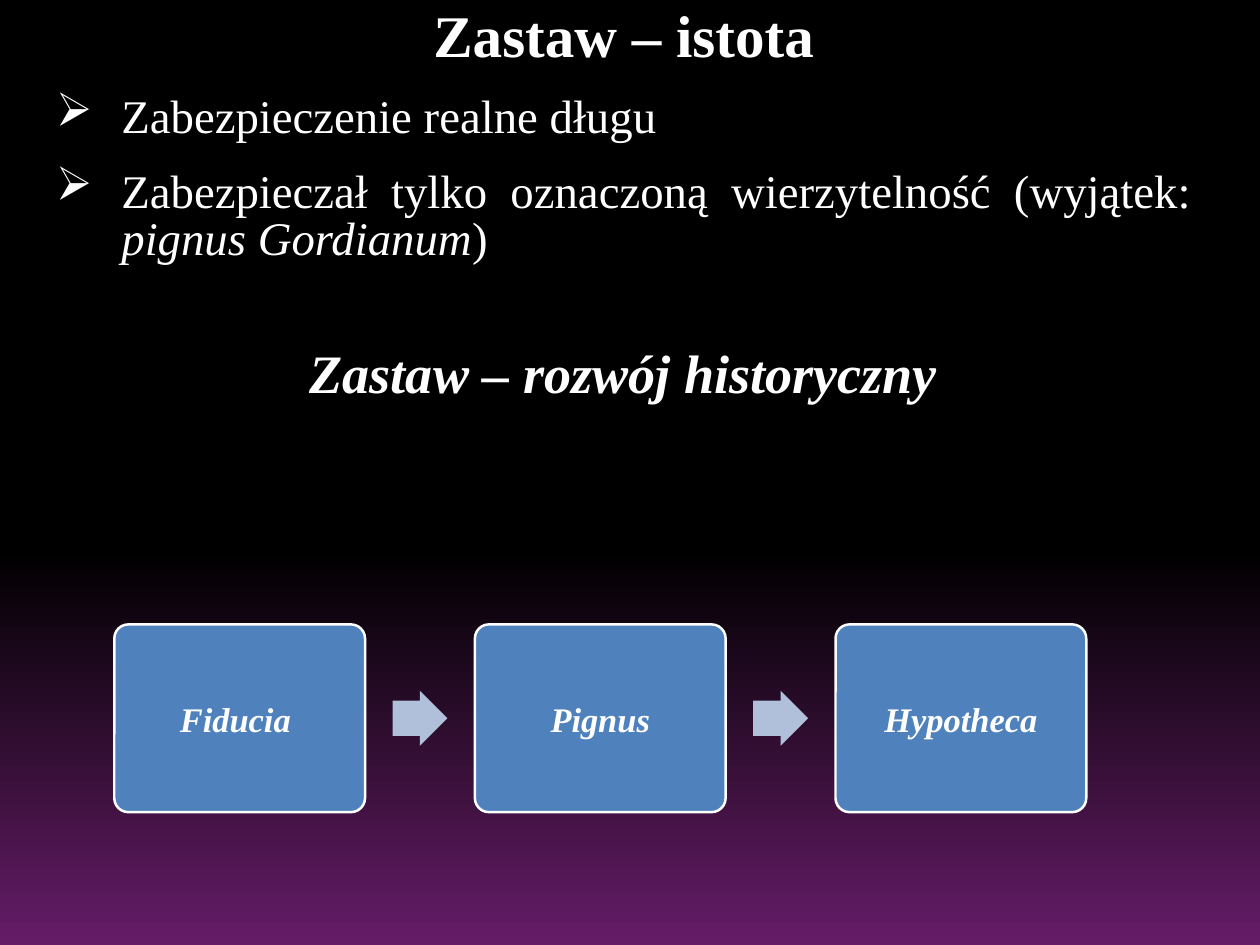
from dataclasses import dataclass

from lxml import etree
from pptx import Presentation
from pptx.dml.color import RGBColor
from pptx.enum.shapes import MSO_SHAPE
from pptx.enum.text import MSO_ANCHOR, PP_ALIGN
from pptx.oxml.ns import qn
from pptx.util import Inches, Pt

CARD = MSO_SHAPE.ROUNDED_RECTANGLE
ARROW = MSO_SHAPE.RIGHT_ARROW
MIDDLE = MSO_ANCHOR.MIDDLE
CENTER = PP_ALIGN.CENTER
JUSTIFY = PP_ALIGN.JUSTIFY

FONT = "Times New Roman"
COLORS = {
    "night": "000000",
    "purple": "641C66",
    "text": "FFFFFF",
    "card": "4F81BD",
    "arrow": "B1C0DA",
}
INSET = 0.07
LINE_SPACING = 0.84
BULLET_INDENT = 0.74

CARD_LEFT, CARD_TOP, CARD_WIDTH, CARD_HEIGHT = 1.29, 7.05, 2.83, 2.12
CARD_PITCH = 4.07
ARROW_SIZE = 0.62
ARROW_OFFSET = 3.14


@dataclass
class Line:
    """One paragraph: pieces alternate between upright and italic text."""
    pieces: tuple[str, ...]
    size: int
    space_before: int = 0
    bold: bool = False
    italic: bool = False
    bullet: str = ""


LINES = [
    Line(("Zastaw – istota",), 48, bold=True),
    Line(("Zabezpieczenie realne długu",), 38, 22, bullet="➢"),
    Line(("Zabezpieczał tylko oznaczoną wierzytelność (wyjątek: ",
          "pignus Gordianum", ")"), 38, 22, bullet="➢"),
    Line(("Zastaw – rozwój historyczny",), 44, 69, bold=True, italic=True),
]
STAGES = ["Fiducia ", "Pignus", "Hypotheca"]


def rgb(name: str) -> RGBColor:
    return RGBColor.from_string(COLORS[name])


def paint_background(slide) -> None:
    fill = slide.background.fill
    fill.gradient()
    fill.gradient_angle = 270
    for stop, position, color in zip(fill.gradient_stops, (0.58, 1), ("night", "purple")):
        stop.position = position
        stop.color.rgb = rgb(color)


def set_insets(frame) -> None:
    frame.word_wrap = True
    frame.margin_left = frame.margin_right = Inches(INSET)
    frame.margin_top = frame.margin_bottom = Inches(INSET)


def set_font(paragraph, size: int, bold: bool) -> None:
    font = paragraph.font
    font.name, font.size, font.bold = FONT, Pt(size), bold
    font.color.rgb = rgb("text")


def write_line(paragraph, line: Line) -> None:
    paragraph.alignment = JUSTIFY if line.bullet else CENTER
    paragraph.line_spacing = LINE_SPACING
    paragraph.space_before = Pt(line.space_before)
    if line.bullet:
        properties = paragraph._p.get_or_add_pPr()
        properties.set("marL", str(Inches(BULLET_INDENT)))
        properties.set("indent", str(-Inches(BULLET_INDENT)))
        etree.SubElement(properties, qn("a:buChar"), char=line.bullet)
    set_font(paragraph, line.size, line.bold)
    for index, piece in enumerate(line.pieces):
        run = paragraph.add_run()
        run.text = piece
        if len(line.pieces) > 1:
            run.font.italic = index % 2 == 1
    if len(line.pieces) == 1:
        paragraph.font.italic = line.italic


def add_body(slide) -> None:
    body = slide.shapes.add_textbox(Inches(0.56), Inches(0.04), Inches(12.96), Inches(5))
    frame = body.text_frame
    set_insets(frame)
    for index, line in enumerate(LINES):
        write_line(frame.add_paragraph() if index else frame.paragraphs[0], line)


def add_filled(slide, kind, left: float, top: float, width: float, height: float, color: str):
    shape = slide.shapes.add_shape(kind, Inches(left), Inches(top), Inches(width), Inches(height))
    shape.shadow.inherit = False
    shape.fill.solid()
    shape.fill.fore_color.rgb = rgb(color)
    return shape


def add_stage(slide, left: float, name: str) -> None:
    card = add_filled(slide, CARD, left, CARD_TOP, CARD_WIDTH, CARD_HEIGHT, "card")
    card.adjustments[0] = 0.075
    card.line.color.rgb = rgb("text")
    card.line.width = Pt(2)
    frame = card.text_frame
    set_insets(frame)
    frame.vertical_anchor = MIDDLE
    label = frame.paragraphs[0]
    label.alignment = CENTER
    label.add_run().text = name
    set_font(label, 28, True)
    label.font.italic = True


def add_arrow(slide, left: float) -> None:
    top = CARD_TOP + (CARD_HEIGHT - ARROW_SIZE) / 2
    arrow = add_filled(slide, ARROW, left, top, ARROW_SIZE, ARROW_SIZE, "arrow")
    arrow.adjustments[0] = 0.64
    arrow.adjustments[1] = 0.5
    arrow.line.fill.background()


def main() -> None:
    deck = Presentation()
    deck.slide_width, deck.slide_height = Inches(14.22), Inches(10.67)
    slide = deck.slides.add_slide(deck.slide_layouts[6])
    paint_background(slide)
    add_body(slide)
    for index, name in enumerate(STAGES):
        left = CARD_LEFT + index * CARD_PITCH
        add_stage(slide, left, name)
        if index < len(STAGES) - 1:
            add_arrow(slide, left + ARROW_OFFSET)
    deck.save("out.pptx")


if __name__ == "__main__":
    main()
